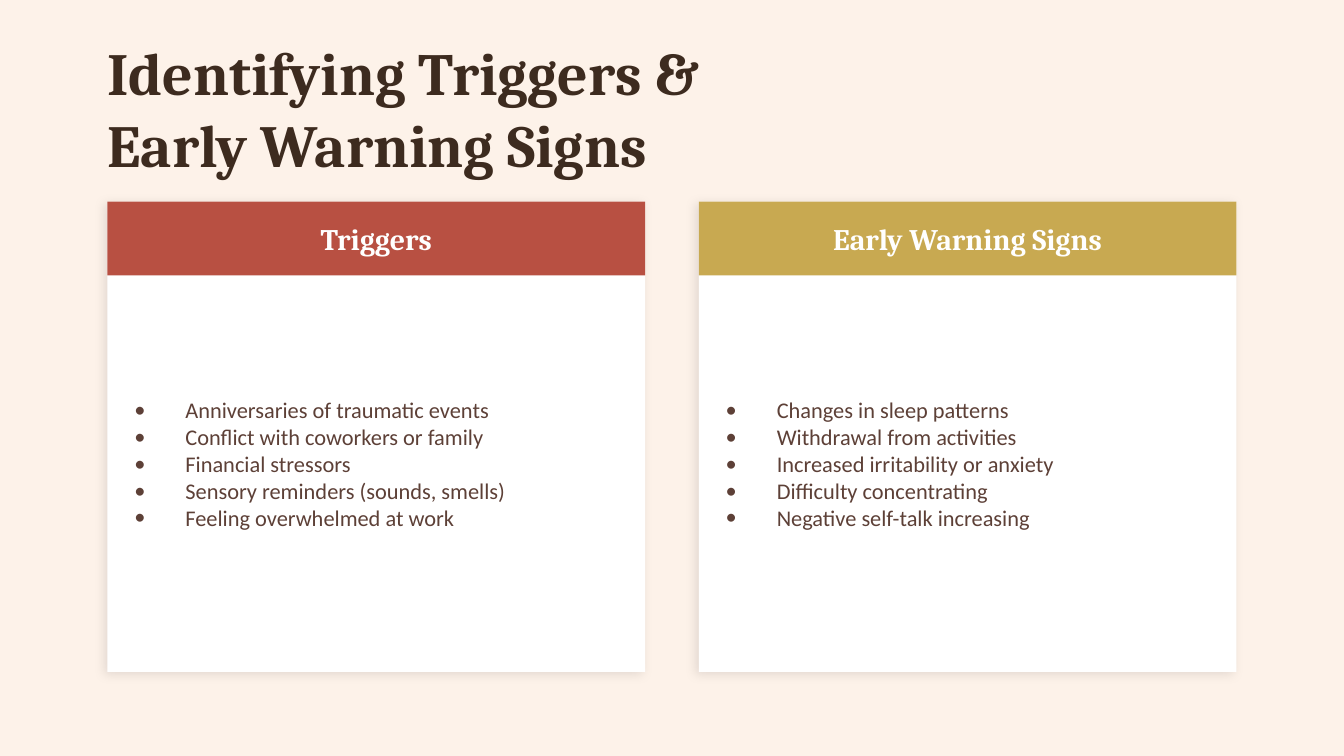
from dataclasses import dataclass

from lxml.etree import SubElement
from pptx import Presentation
from pptx.dml.color import RGBColor as Rgb
from pptx.enum.shapes import MSO_SHAPE as Shape
from pptx.enum.text import MSO_ANCHOR as Anchor, PP_ALIGN as Align
from pptx.oxml.ns import qn
from pptx.util import Inches, Pt


@dataclass(frozen=True)
class Theme:
    back: str = "FDF2E9"
    dark: str = "3D2B1F"
    body: str = "5D4037"
    white: str = "FFFFFF"
    red: str = "B85042"
    gold: str = "C8A951"
    serif: str = "Cambria"
    sans: str = "Calibri"
    title: int = 32
    head: int = 16
    item: int = 12


# Slide in 16:9
theme = Theme()
deck = Presentation()
deck.slide_width, deck.slide_height = Inches(10), Inches(10 * 9 / 16)
slide = deck.slides.add_slide(deck.slide_layouts[6])
slide.background.fill.solid()
slide.background.fill.fore_color.rgb = Rgb.from_string(theme.back)


def add_rect(x, y, w, h, color):
    rect = slide.shapes.add_shape(
        Shape.RECTANGLE, Inches(x), Inches(y), Inches(w), Inches(h))
    rect.shadow.inherit = False
    rect.fill.solid()
    rect.fill.fore_color.rgb = Rgb.from_string(color)
    rect.line.fill.background()
    return rect


def add_text(lines, x, y, w, h, *, size, color, font, bold=False,
             align=Align.LEFT, bullet=False):
    frame = slide.shapes.add_textbox(
        Inches(x), Inches(y), Inches(w), Inches(h)).text_frame
    frame.word_wrap = True
    frame.vertical_anchor = Anchor.MIDDLE
    frame.margin_left = frame.margin_right = 0
    frame.margin_top = frame.margin_bottom = 0
    frame.text = "\n".join(lines)
    for para in frame.paragraphs:
        para.alignment = align
        if bullet:
            props = para._p.get_or_add_pPr()
            props.set("marL", str(Inches(0.38)))
            props.set("indent", str(-Inches(0.38)))
            SubElement(props, qn("a:buSzPct"), val="100000")
            SubElement(props, qn("a:buFont"), typeface=font)
            SubElement(props, qn("a:buChar"), char="•")
        style = para.runs[0].font
        style.name, style.size, style.bold = font, Pt(size), bold
        style.color.rgb = Rgb.from_string(color)


# Title
left, top, wide, gap = 0.8, 1.5, 4, 0.4
add_text(["Identifying Triggers &", "Early Warning Signs"],
         left, 0.3, 2 * wide + gap, 1, size=theme.title, color=theme.dark,
         font=theme.serif, bold=True)

# Two cards side by side
cards = [
    ("Triggers", theme.red, [
        "Anniversaries of traumatic events",
        "Conflict with coworkers or family",
        "Financial stressors",
        "Sensory reminders (sounds, smells)",
        "Feeling overwhelmed at work"]),
    ("Early Warning Signs", theme.gold, [
        "Changes in sleep patterns",
        "Withdrawal from activities",
        "Increased irritability or anxiety",
        "Difficulty concentrating",
        "Negative self-talk increasing"]),
]
bar, pad = 0.55, 0.2
for col, (head, color, items) in enumerate(cards):
    x = left + col * (wide + gap)

    # Card with a soft shadow
    card = add_rect(x, top, wide, 3.5, theme.white)
    effects = card._element.spPr.find(qn("a:effectLst"))
    shade = SubElement(effects, qn("a:outerShdw"), blurRad=str(Pt(6)),
                       dist=str(Pt(2)), dir=str(135 * 60000),
                       algn="bl", rotWithShape="0")
    black = SubElement(shade, qn("a:srgbClr"), val="000000")
    SubElement(black, qn("a:alpha"), val="10000")

    # Header bar
    add_rect(x, top, wide, bar, color)
    add_text([head], x, top, wide, bar, size=theme.head, color=theme.white,
             font=theme.serif, bold=True, align=Align.CENTER)

    # Bullet list
    add_text(items, x + pad, 2.2, wide - 2 * pad, 2.5, size=theme.item,
             color=theme.body, font=theme.sans, bullet=True)

deck.save("out.pptx")
